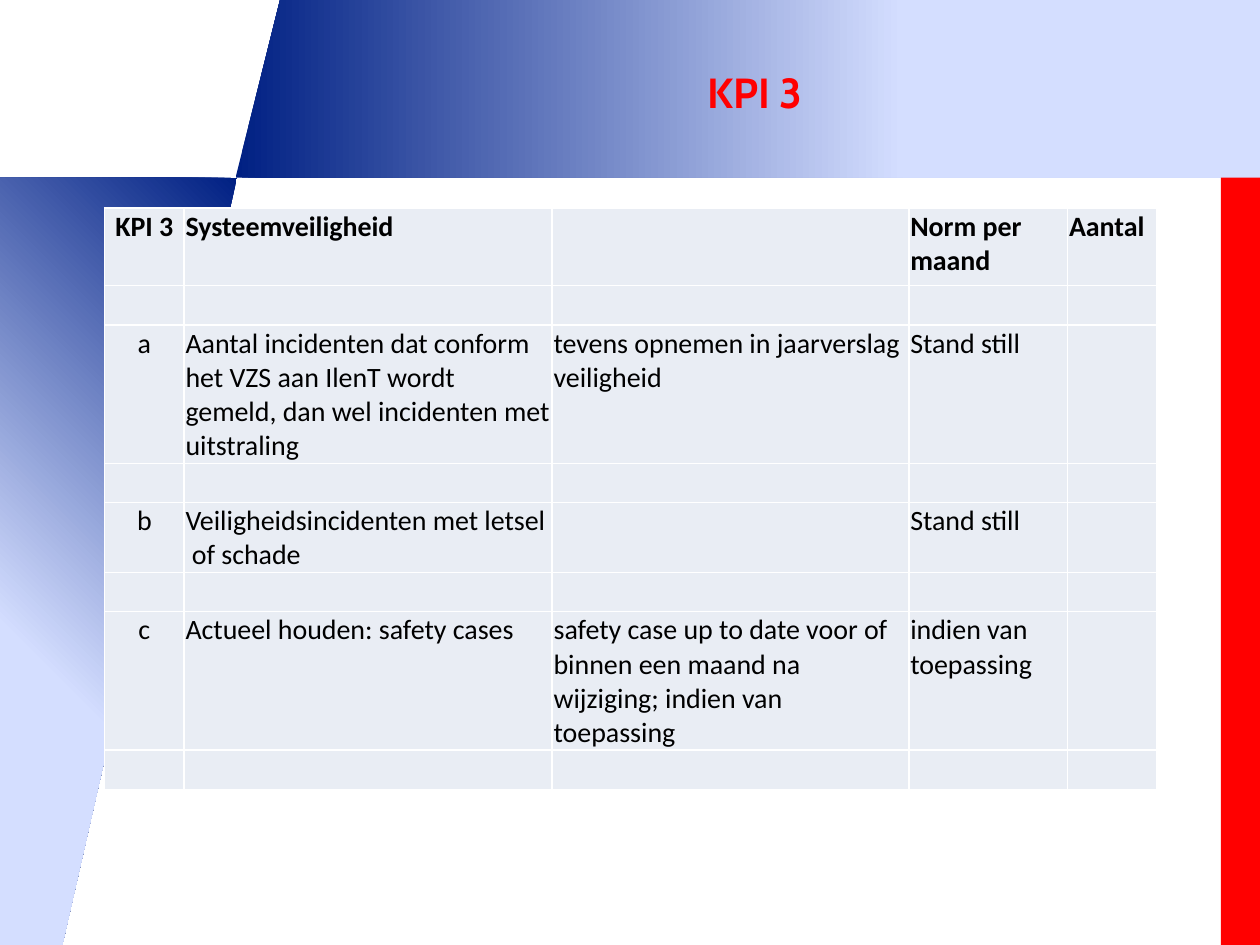
"""Build the KPI 3 slide with its system safety table."""
from dataclasses import dataclass
from typing import Optional

from lxml.etree import SubElement
from pptx import Presentation
from pptx.dml.color import RGBColor
from pptx.enum.shapes import MSO_SHAPE
from pptx.enum.text import MSO_ANCHOR, PP_ALIGN
from pptx.oxml.ns import qn
from pptx.util import Cm, Pt

COLORS = {
    "navy": "002083",
    "pale": "D4DEFF",
    "sage": "96AB94",
    "red": "FF0000",
    "cell": "E9EDF4",
    "white": "FFFFFF",
    "black": "000000",
}
GRADIENT = ((0, "navy"), (53, "pale"), (83, "pale"), (100, "sage"))
COLUMN_WIDTHS = (1.6, 7.42, 7.19, 3.2, 1.8)
SINGLE_ROW, DOUBLE_ROW = 0.79, 1.57
BLANK = ("",) * len(COLUMN_WIDTHS)
ROWS = (
    (DOUBLE_ROW, ("KPI 3", "Systeemveiligheid", "", "Norm per maand", "Aantal")),
    (SINGLE_ROW, BLANK),
    (DOUBLE_ROW, (
        "a",
        "Aantal incidenten dat conform het VZS aan IlenT wordt gemeld, "
        "dan wel incidenten met uitstraling",
        "tevens opnemen in jaarverslag veiligheid",
        "Stand still",
        "",
    )),
    (SINGLE_ROW, BLANK),
    (SINGLE_ROW, ("b", "Veiligheidsincidenten met letsel  of schade", "", "Stand still", "")),
    (SINGLE_ROW, BLANK),
    (DOUBLE_ROW, (
        "c",
        "Actueel houden: safety cases",
        "safety case up to date voor of binnen een maand na wijziging; "
        "indien van toepassing",
        "indien van toepassing",
        "",
    )),
    (SINGLE_ROW, BLANK),
)


@dataclass(frozen=True)
class Band:
    """A coloured background band, with lengths in centimetres."""

    kind: MSO_SHAPE
    left: float
    top: float
    width: float
    height: float
    color: Optional[str] = None
    slant: Optional[float] = None
    angle: float = 0


BANDS = (
    Band(MSO_SHAPE.PARALLELOGRAM, 4.75, 0, 25.4, 3.58, slant=0.25),
    Band(MSO_SHAPE.PARALLELOGRAM, -3.96, 3.58, 8.74, 17.27, slant=0.45, angle=225),
    Band(MSO_SHAPE.RECTANGLE, 24.61, 3.58, 0.79, 15.47, color="red"),
)


def rgb(name: str) -> RGBColor:
    """Return the named colour."""
    return RGBColor.from_string(COLORS[name])


def write_text(paragraph, text: str, *, size: float, font: str, color: str,
               bold: bool = False, alignment=PP_ALIGN.LEFT) -> None:
    """Write one formatted run, or size the paragraph when it is empty."""
    paragraph.alignment = alignment
    if not text:
        paragraph._p.get_or_add_endParaRPr().set("sz", str(size * 100))
        return
    run = paragraph.add_run()
    run.text = text
    run.font.size = Pt(size)
    run.font.name = font
    run.font.bold = bold
    run.font.color.rgb = rgb(color)


def fill_gradient(shape, angle: float) -> None:
    """Fill a shape with the house gradient."""
    shape.fill.gradient()
    shape.fill.gradient_angle = angle
    stops = shape._element.spPr.find(qn("a:gradFill")).find(qn("a:gsLst"))
    for stop in list(stops):
        stops.remove(stop)
    for percent, color in GRADIENT:
        stop = SubElement(stops, qn("a:gs"), pos=str(percent * 1000))
        SubElement(stop, qn("a:srgbClr"), val=COLORS[color])


def draw_band(slide, band: Band) -> None:
    """Draw one background band."""
    shape = slide.shapes.add_shape(
        band.kind, Cm(band.left), Cm(band.top), Cm(band.width), Cm(band.height))
    shape.shadow.inherit = False
    shape.line.fill.background()
    if band.slant is not None:
        shape.adjustments[0] = band.slant
    if band.color:
        shape.fill.solid()
        shape.fill.fore_color.rgb = rgb(band.color)
    else:
        fill_gradient(shape, band.angle)


def format_cell(cell) -> None:
    """Give a cell its margins, white borders and fill."""
    cell.margin_left = cell.margin_right = cell.margin_top = Cm(0.03)
    cell.margin_bottom = 0
    properties = cell._tc.get_or_add_tcPr()
    for side in ("lnL", "lnR", "lnT", "lnB"):
        border = SubElement(properties, qn(f"a:{side}"), w=str(Pt(1)))
        solid = SubElement(border, qn("a:solidFill"))
        SubElement(solid, qn("a:srgbClr"), val=COLORS["white"])
    cell.fill.solid()
    cell.fill.fore_color.rgb = rgb("cell")


def draw_table(slide) -> None:
    """Draw the table of safety indicators."""
    table = slide.shapes.add_table(
        len(ROWS), len(COLUMN_WIDTHS), Cm(2.11), Cm(4.19),
        Cm(sum(COLUMN_WIDTHS)), Cm(sum(height for height, _ in ROWS))).table
    table.first_row = table.horz_banding = False
    for column, width in zip(table.columns, COLUMN_WIDTHS):
        column.width = Cm(width)
    for row_index, (height, texts) in enumerate(ROWS):
        table.rows[row_index].height = Cm(height)
        for column_index, text in enumerate(texts):
            cell = table.cell(row_index, column_index)
            format_cell(cell)
            write_text(
                cell.text_frame.paragraphs[0], text, size=16, font="Calibri",
                color="black", bold=row_index == 0,
                alignment=PP_ALIGN.LEFT if column_index else PP_ALIGN.CENTER)


def place_title(slide) -> None:
    """Place the title in front of the bands."""
    title = slide.shapes.title
    slide.shapes._spTree.append(title._element)
    title.left, title.top, title.width, title.height = Cm(6.3), Cm(0.76), Cm(17.83), Cm(2.16)
    title.text_frame.vertical_anchor = MSO_ANCHOR.MIDDLE
    write_text(title.text_frame.paragraphs[0], "KPI 3", size=24, font="Cabin",
               color="red", bold=True, alignment=PP_ALIGN.CENTER)


def main() -> None:
    """Build and save the presentation."""
    presentation = Presentation()
    presentation.slide_width, presentation.slide_height = Cm(25.4), Cm(19.05)
    slide = presentation.slides.add_slide(presentation.slide_layouts[5])
    for band in BANDS:
        draw_band(slide, band)
    place_title(slide)
    draw_table(slide)
    presentation.save("out.pptx")


if __name__ == "__main__":
    main()
